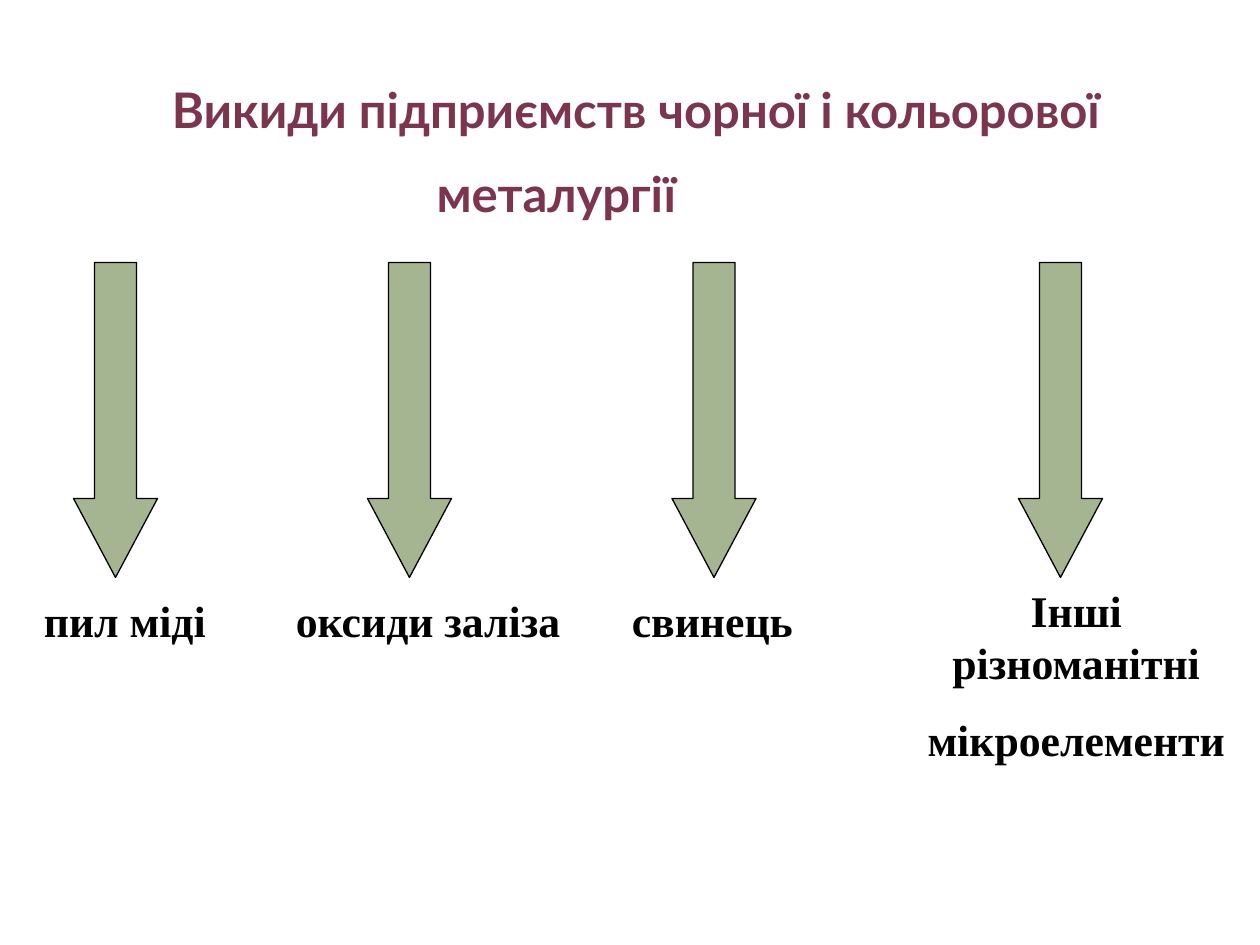
import pptx
import pptx.dml.color
import pptx.enum.shapes
import pptx.enum.text
import pptx.util

PX = 7620  # EMU, 120 px to the inch
PLUM = pptx.dml.color.RGBColor(0x7C, 0x35, 0x4D)
SAGE = pptx.dml.color.RGBColor(0xA5, 0xB5, 0x92)
BLACK = pptx.dml.color.RGBColor(0, 0, 0)
LEFT = pptx.enum.text.PP_ALIGN.LEFT
CENTER = pptx.enum.text.PP_ALIGN.CENTER

deck = pptx.Presentation()
deck.slide_width = 1200 * PX
deck.slide_height = 900 * PX
page = deck.slides.add_slide(deck.slide_layouts[6])


def add_text(left, top, width, height, lines, font, size, color, align=LEFT):
    """Add a box of bold paragraphs and return the paragraphs."""
    box = page.shapes.add_textbox(left * PX, top * PX, width * PX, height * PX)
    frame = box.text_frame
    frame.word_wrap = True
    frame.text = "\n".join(lines)
    for index, para in enumerate(frame.paragraphs):
        para.alignment = align
        if index > 0:
            para.space_before = pptx.util.Pt(14)
        for span in para.runs:
            span.font.name = font
            span.font.size = pptx.util.Pt(size)
            span.font.bold = True
            span.font.color.rgb = color
    return frame.paragraphs


title = add_text(120, 70, 1020, 152,
                 ["Викиди підприємств чорної і кольорової", "металургії"],
                 "Lato", 28, PLUM)
for para, indent in zip(title, (32, 284)):
    para._p.get_or_add_pPr().set("marL", str(indent * PX))

for left in (70, 350, 640, 970):
    arrow = page.shapes.add_shape(pptx.enum.shapes.MSO_SHAPE.DOWN_ARROW,
                                  left * PX, 250 * PX, 80 * PX, 300 * PX)
    arrow.adjustments[0] = 0.5
    arrow.adjustments[1] = 0.94
    arrow.shadow.inherit = False
    arrow.fill.solid()
    arrow.fill.fore_color.rgb = SAGE
    arrow.line.color.rgb = BLACK
    arrow.line.width = pptx.util.Pt(0.75)

emissions = [
    (30, 560, 360, 62, ["пил міді"], LEFT),
    (270, 560, 350, 62, ["оксиди заліза"], LEFT),
    (590, 560, 310, 62, ["свинець"], LEFT),
    (850, 550, 350, 187, ["Інші різноманітні", "мікроелементи"], CENTER),
]
for left, top, width, height, lines, align in emissions:
    add_text(left, top, width, height, lines, "Times New Roman", 25, BLACK, align)

deck.save("out.pptx")
